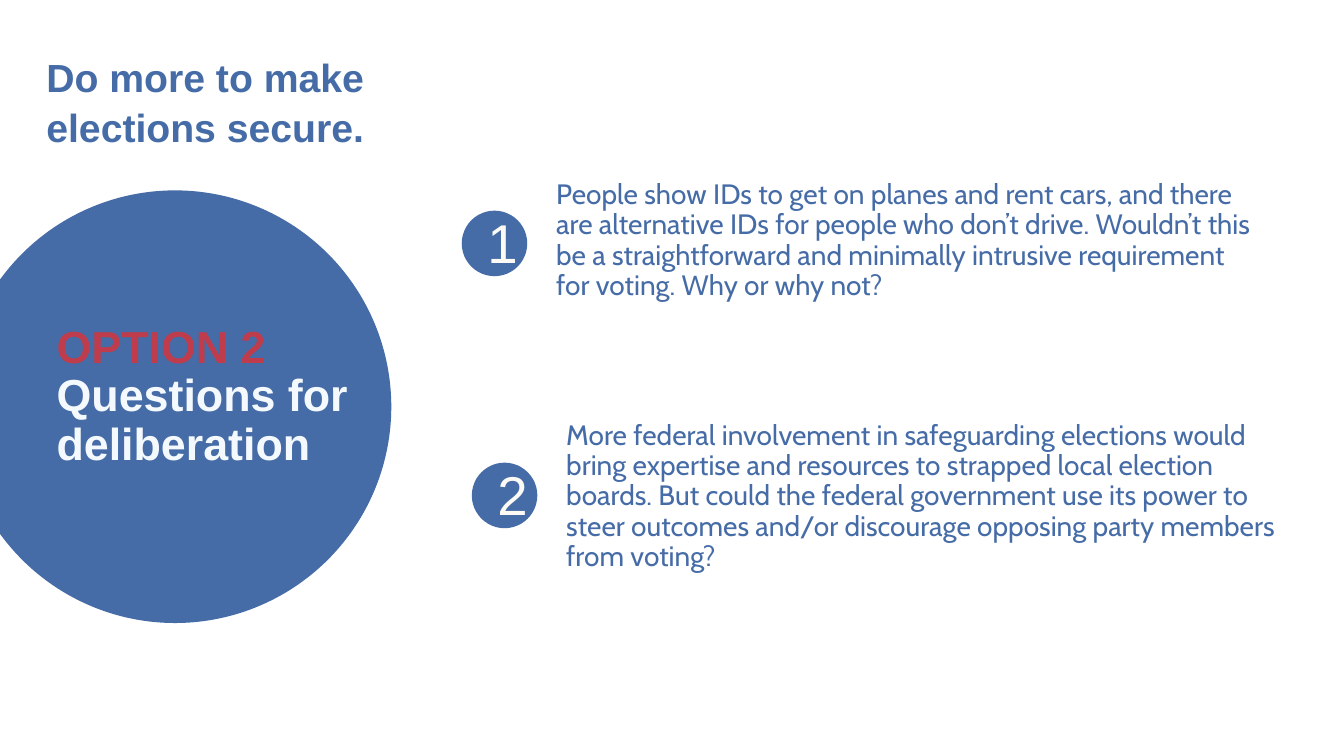
from pptx import Presentation
from pptx.dml.color import RGBColor
from pptx.enum.shapes import MSO_SHAPE as Preset
from pptx.enum.text import MSO_ANCHOR as Anchor, MSO_AUTO_SIZE as AutoSize, PP_ALIGN as Align
from pptx.util import Pt

THEME = {
    "blue": RGBColor.from_string("466CA7"),
    "red": RGBColor.from_string("BE3C4C"),
    "pale": RGBColor.from_string("F4F9FE"),
    "cream": RGBColor.from_string("FDFAF5"),
    "heading": {"name": "Arial", "size": Pt(28), "bold": True},
    "option": {"name": "Arial", "size": Pt(32), "bold": True},
    "number": {"name": "Arial", "size": Pt(39), "bold": False},
    "body": {"name": "Cabin", "size": Pt(20), "bold": False},
}

# Circle left and top, question top and width, wording
QUESTIONS = [
    (329.8, 150.5, 141.8, 512.6,
     "People show IDs to get on planes and rent cars, and there are alternative IDs "
     "for people who don’t drive. Wouldn’t this be a straightforward and minimally "
     "intrusive requirement for voting. Why or why not?"),
    (337, 330.5, 324.7, 523.4,
     "More federal involvement in safeguarding elections would bring expertise and "
     "resources to strapped local election boards. But could the federal government "
     "use its power to steer outcomes and/or discourage opposing party members from "
     "voting?"),
]


class SlideBuilder:
    def __init__(self, presentation, theme):
        self.theme = theme
        self.slide = presentation.slides.add_slide(presentation.slide_layouts[5])

    def place(self, shape, left, top, width, height):
        box = {"left": left, "top": top, "width": width, "height": height}
        for name, value in box.items():
            setattr(shape, name, Pt(value))

    def fill_text(self, shape, lines, style, spacing=1.0, inset=None,
                  anchor=Anchor.TOP, wrap=True):
        """Fill a shape with one paragraph per (text, colour name) line."""
        frame = shape.text_frame
        settings = {"word_wrap": wrap, "auto_size": AutoSize.NONE, "vertical_anchor": anchor}
        if inset is not None:
            for side in ("left", "top", "right", "bottom"):
                settings[f"margin_{side}"] = Pt(inset)
        for name, value in settings.items():
            setattr(frame, name, value)
        for index, (text, colour) in enumerate(lines):
            paragraph = frame.add_paragraph() if index else frame.paragraphs[0]
            paragraph.alignment = Align.LEFT
            paragraph.line_spacing = spacing
            paragraph.space_before = Pt(0)
            run = paragraph.add_run()
            run.text = text
            for name, value in self.theme[style].items():
                setattr(run.font, name, value)
            run.font.color.rgb = self.theme[colour]

    def title(self, box, lines, style, **options):
        shape = self.slide.shapes.title
        self.place(shape, *box)
        self.fill_text(shape, lines, style, **options)

    def text(self, box, lines, style, **options):
        shape = self.slide.shapes.add_textbox(*map(Pt, box))
        self.fill_text(shape, lines, style, **options)

    def circle(self, left, top, diameter):
        shape = self.slide.shapes.add_shape(
            Preset.OVAL, Pt(left), Pt(top), Pt(diameter), Pt(diameter))
        shape.shadow.inherit = False
        shape.fill.solid()
        shape.fill.fore_color.rgb = self.theme["blue"]
        shape.line.fill.background()

    def question(self, number, left, top, text_top, text_width, wording):
        self.circle(left, top, 46.8)
        self.text((left + 11.2, top - 14.2, 46, 72), [(str(number), "cream")],
                  "number", anchor=Anchor.MIDDLE)
        self.text((left + 60.4, text_top, text_width, 60.5), [(wording, "blue")],
                  "body", spacing=0.9, anchor=Anchor.MIDDLE)


def main():
    presentation = Presentation()
    presentation.slide_width = Pt(960)
    presentation.slide_height = Pt(540)

    builder = SlideBuilder(presentation, THEME)
    builder.title((33.1, 36.7, 276.5, 85.7),
                  [("Do more to make", "blue"), ("elections secure.", "blue")],
                  "heading", spacing=1.05, inset=0, wrap=False)
    builder.circle(-29.5, 136, 309)
    builder.text((38.2, 229.7, 265, 108.7),
                 [("OPTION 2", "red"), ("Questions for deliberation", "pale")],
                 "option", spacing=0.9, inset=2.2)
    for number, question in enumerate(QUESTIONS, start=1):
        builder.question(number, *question)

    presentation.save("out.pptx")


if __name__ == "__main__":
    main()
